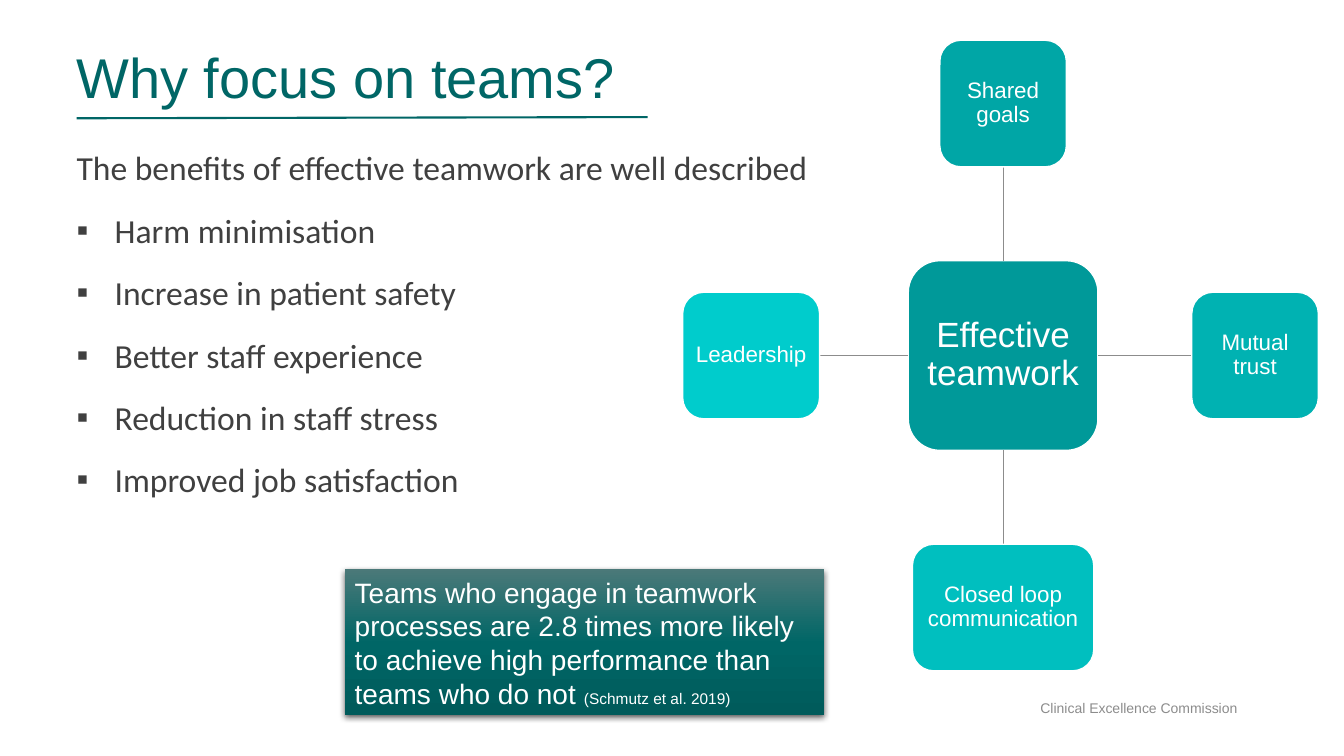
from lxml import etree
from pptx import Presentation
from pptx.dml.color import RGBColor
from pptx.enum.shapes import MSO_CONNECTOR, MSO_SHAPE
from pptx.enum.text import MSO_ANCHOR as Anchor, PP_ALIGN as Align
from pptx.oxml import parse_xml
from pptx.oxml.ns import nsdecls, qn
from pptx.util import Cm, Pt

# Content
TITLE = "Why focus on teams?"
INTRO = "The benefits of effective teamwork are well described"
BENEFITS = [
    "Harm minimisation",
    "Increase in patient safety",
    "Better staff experience",
    "Reduction in staff stress",
    "Improved job satisfaction",
]
FINDING = ("Teams who engage in teamwork processes are 2.8 times more likely "
           "to achieve high performance than teams who do not ")
CITATION = "(Schmutz et al. 2019)"
FOOTER = "Clinical Excellence Commission"
HUB = "Effective teamwork"

# Colours
TEAL = RGBColor(0x00, 0x66, 0x66)
DARK = RGBColor(0x40, 0x40, 0x40)
GREY = RGBColor(0x8C, 0x8C, 0x8C)
WHITE = RGBColor(0xFF, 0xFF, 0xFF)
HUB_FILL = RGBColor(0x00, 0x99, 0x99)
FINDING_STOPS = [(0, "4B7979"), (50, "006666"), (100, "005B5B")]

# Elements around the hub: label, direction (x, y), width in cm, fill
ELEMENTS = [
    ("Shared goals", (0, -1), 3.19, RGBColor(0x00, 0xA6, 0xA6)),
    ("Mutual trust", (1, 0), 3.19, RGBColor(0x00, 0xB2, 0xB2)),
    ("Closed loop communication", (0, 1), 4.57, RGBColor(0x00, 0xBF, 0xBF)),
    ("Leadership", (-1, 0), 3.45, RGBColor(0x00, 0xCC, 0xCC)),
]
HUB_X, HUB_Y, HUB_SIZE = 25.28, 8.96, 4.78
RADIUS, ELEMENT_HEIGHT = 6.35, 3.19

deck = Presentation()
deck.slide_width, deck.slide_height = Cm(33.87), Cm(19.05)
slide = deck.slides.add_slide(deck.slide_layouts[6])


def write(frame, paragraphs, size, color, font="Arial", align=Align.LEFT,
          anchor=Anchor.TOP, inset=(0, 0), spacing=1.0, before=0, bullet=None):
    """Fill a frame; a paragraph is a list of (text, size or None) runs."""
    frame.word_wrap = True
    frame.vertical_anchor = anchor
    frame.margin_left = frame.margin_right = Cm(inset[0])
    frame.margin_top = frame.margin_bottom = Cm(inset[1])
    for i, runs in enumerate(paragraphs):
        paragraph = frame.add_paragraph() if i else frame.paragraphs[0]
        if bullet and i:
            props = paragraph._p.get_or_add_pPr()
            props.set("marL", str(Cm(0.96)))
            props.set("indent", str(-Cm(0.96)))
            etree.SubElement(props, qn("a:buFont")).set("typeface", "Arial")
            etree.SubElement(props, qn("a:buChar")).set("char", bullet)
        paragraph.alignment = align
        paragraph.line_spacing = spacing
        paragraph.space_before = Pt(before if i else 0)
        for text, run_size in runs:
            run = paragraph.add_run()
            run.text = text
            run.font.name = font
            run.font.size = Pt(run_size or size)
            run.font.color.rgb = color


def text_box(left, top, width, height, paragraphs, **style):
    box = slide.shapes.add_textbox(Cm(left), Cm(top), Cm(width), Cm(height))
    write(box.text_frame, paragraphs, **style)


def line(x1, y1, x2, y2, color, weight):
    rule = slide.shapes.add_connector(
        MSO_CONNECTOR.STRAIGHT, Cm(x1), Cm(y1), Cm(x2), Cm(y2))
    rule.line.color.rgb = color
    rule.line.width = Pt(weight)
    etree.SubElement(rule._element.spPr, qn("a:effectLst"))


def node(label, x, y, width, height, fill, size, inset):
    """Rounded box centred on x, y."""
    box = slide.shapes.add_shape(
        MSO_SHAPE.ROUNDED_RECTANGLE, Cm(x - width / 2), Cm(y - height / 2),
        Cm(width), Cm(height))
    box.shadow.inherit = False
    box.fill.solid()
    box.fill.fore_color.rgb = fill
    box.line.color.rgb = WHITE
    box.line.width = Pt(1)
    write(box.text_frame, [[(label, None)]], size=size, color=WHITE,
          align=Align.CENTER, anchor=Anchor.MIDDLE, inset=(inset, inset),
          spacing=0.9)


# Title and its rule
text_box(1.93, 1.09, 30, 1.85, [[(TITLE, None)]], size=40, color=TEAL,
         anchor=Anchor.MIDDLE, spacing=0.9)
line(1.93, 2.98, 16.32, 2.95, TEAL, 1.5)

# Benefits
text_box(1.93, 3.51, 20.37, 11.1, [[(text, None)] for text in [INTRO] + BENEFITS],
         size=24, color=DARK, font="Calibri", spacing=1.2, before=10, bullet="▪")

# Teamwork diagram
node(HUB, HUB_X, HUB_Y, HUB_SIZE, HUB_SIZE, HUB_FILL, size=25, inset=0.17)
for label, (dx, dy), width, fill in ELEMENTS:
    near = HUB_SIZE / 2
    far = RADIUS - (width if dx else ELEMENT_HEIGHT) / 2
    line(HUB_X + dx * near, HUB_Y + dy * near,
         HUB_X + dx * far, HUB_Y + dy * far, GREY, 0.75)
    node(label, HUB_X + dx * RADIUS, HUB_Y + dy * RADIUS, width,
         ELEMENT_HEIGHT, fill, size=16, inset=0.11)

# Research finding: gradient panel with a soft shadow
panel = slide.shapes.add_shape(
    MSO_SHAPE.RECTANGLE, Cm(8.69), Cm(14.35), Cm(12.09), Cm(3.68))
panel.line.fill.background()
panel.shadow.inherit = False
stops = "".join(f'<a:gs pos="{pos * 1000}"><a:srgbClr val="{color}"/></a:gs>'
                for pos, color in FINDING_STOPS)
gradient = parse_xml(f'<a:gradFill {nsdecls("a")} rotWithShape="1"><a:gsLst>{stops}'
                     '</a:gsLst><a:lin ang="5400000" scaled="0"/></a:gradFill>')
panel_props = panel._element.spPr
panel_props.find(qn("a:prstGeom")).addnext(gradient)
panel_props.find(qn("a:effectLst")).append(parse_xml(
    f'<a:outerShdw {nsdecls("a")} blurRad="{Pt(4.5)}" dist="{Pt(1.5)}" '
    'dir="5400000" algn="ctr" rotWithShape="0"><a:srgbClr val="000000">'
    '<a:alpha val="63000"/></a:srgbClr></a:outerShdw>'))
write(panel.text_frame, [[(FINDING, None), (CITATION, 11)]], size=20,
      color=WHITE, anchor=Anchor.MIDDLE, inset=(0.25, 0.13))

# Footer
text_box(19.51, 17.02, 11.67, 1.02, [[(FOOTER, None)]], size=10, color=GREY,
         align=Align.RIGHT, anchor=Anchor.BOTTOM)

deck.save("out.pptx")
